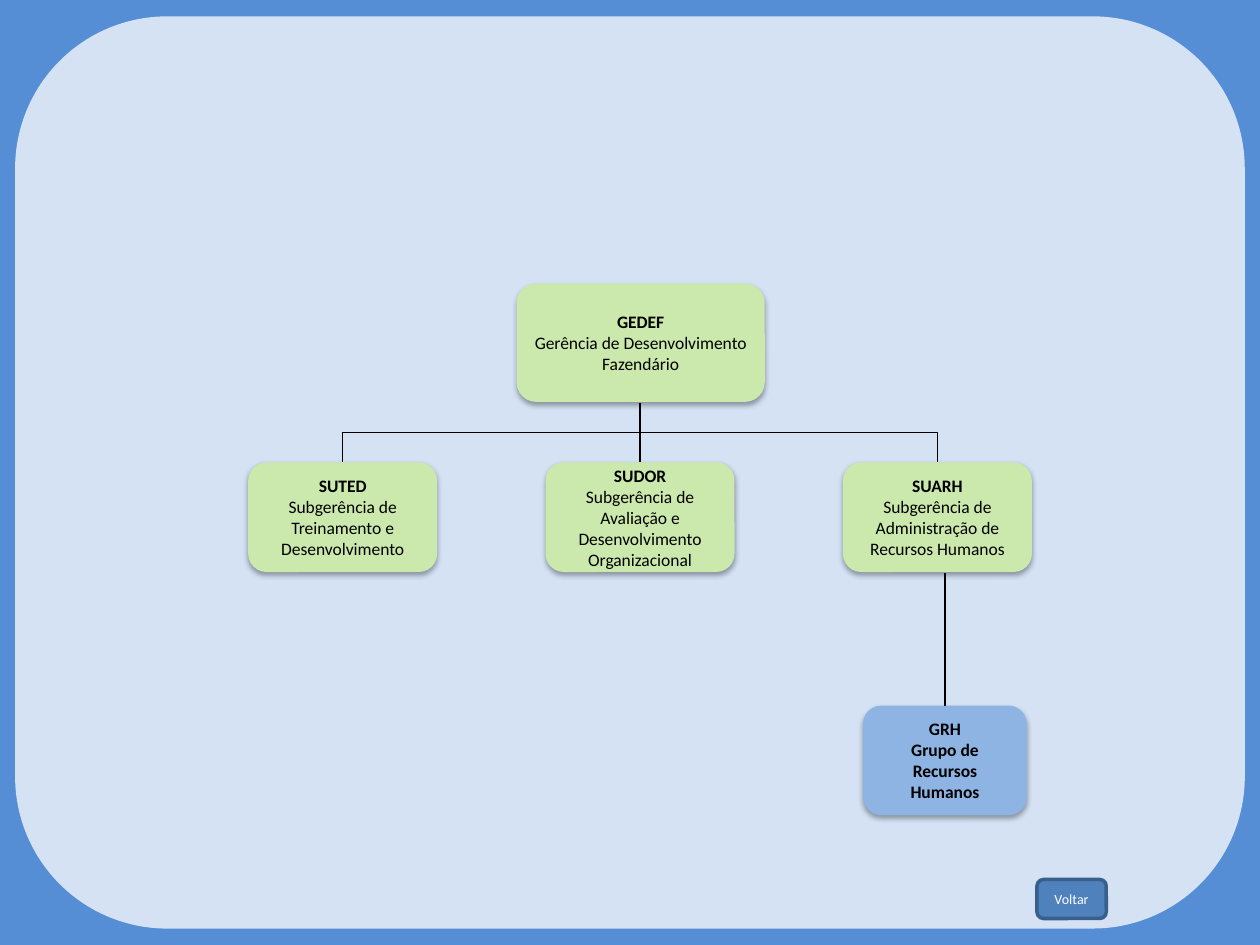
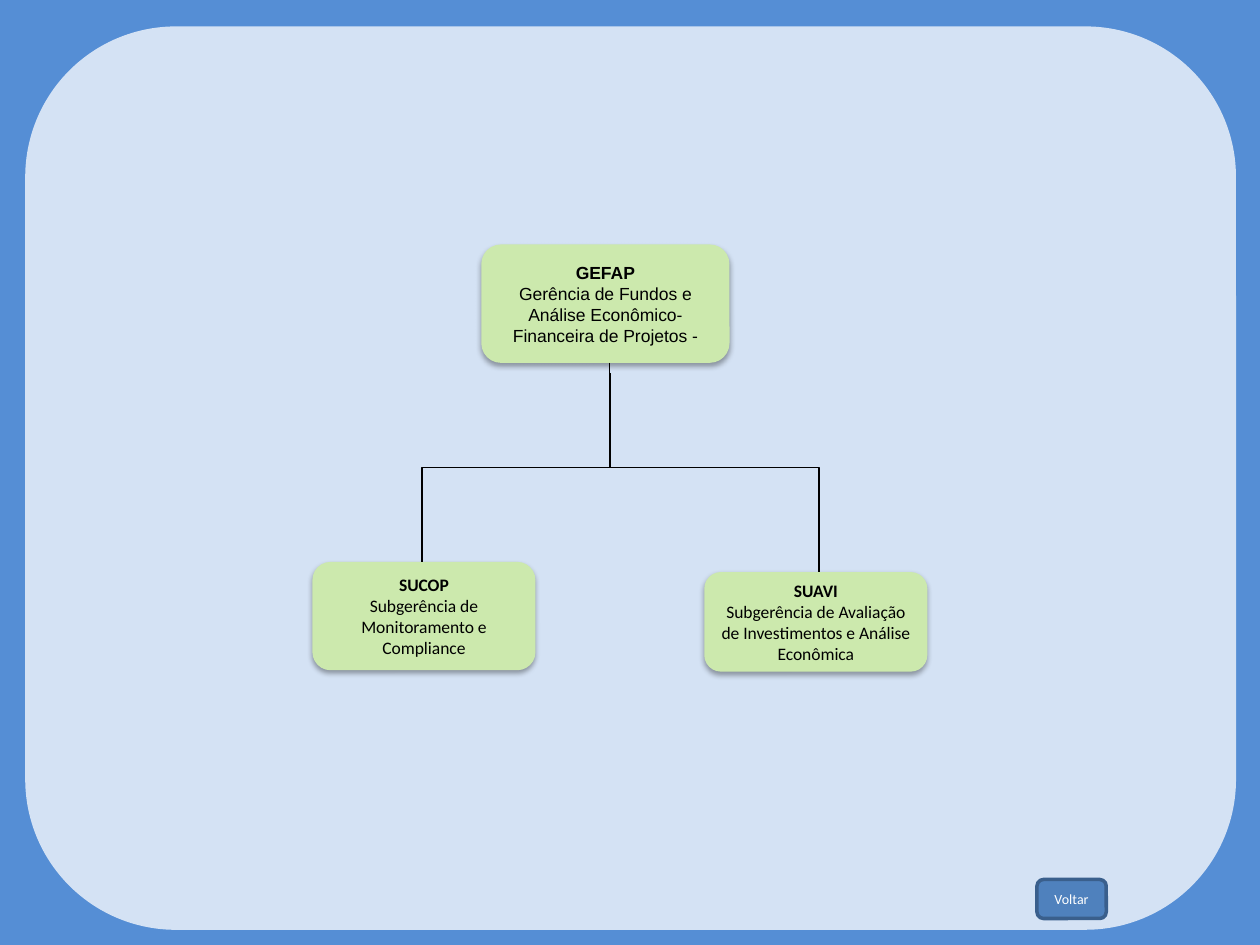
from lxml import etree
from pptx import Presentation
from pptx.dml.color import RGBColor
from pptx.enum.shapes import MSO_CONNECTOR, MSO_SHAPE
from pptx.enum.text import MSO_ANCHOR, PP_ALIGN
from pptx.oxml import parse_xml
from pptx.oxml.ns import nsdecls, qn
from pptx.util import Inches, Pt

ROUND = MSO_SHAPE.ROUNDED_RECTANGLE
ELBOW, STRAIGHT = MSO_CONNECTOR.ELBOW, MSO_CONNECTOR.STRAIGHT
CENTER, MIDDLE = PP_ALIGN.CENTER, MSO_ANCHOR.MIDDLE

COLORS = {
    "back": "558ED5",
    "panel": "D4E2F4",
    "unit": "CCE9AD",
    "group": "8EB4E3",
    "button": "4F81BD",
    "border": "3A5F8C",
    "ink": "000000",
    "white": "FFFFFF",
}
SHADOW = (
    f'<a:effectLst {nsdecls("a")}>'
    '<a:outerShdw blurRad="40000" dist="23000" dir="5400000" rotWithShape="0">'
    f'<a:srgbClr val="{COLORS["ink"]}"><a:alpha val="35000"/></a:srgbClr>'
    "</a:outerShdw></a:effectLst>"
)


def rgb(name):
    return RGBColor.from_string(COLORS[name])


class Chart:
    """Organisation chart slides: shared style and the current slide."""

    def __init__(self):
        self.prs = Presentation()
        self.prs.slide_width, self.prs.slide_height = Inches(10), Inches(7.5)
        fill = self.prs.slide_master.background.fill
        fill.solid()
        fill.fore_color.rgb = rgb("back")
        self.slide = None

    def start(self, *panel):
        """Add a slide with its pale panel and back button."""
        self.slide = self.prs.slides.add_slide(self.prs.slide_layouts[6])
        self.block(panel, "panel")
        button = self.block((8.23, 6.98, 0.55, 0.31), "button")
        button.line.color.rgb = rgb("border")
        button.line.width = Pt(2)
        self.label(button, ["Voltar"], 8, "white")

    def block(self, area, color):
        shape = self.slide.shapes.add_shape(ROUND, *map(Inches, area))
        shape.shadow.inherit = False
        shape.fill.solid()
        shape.fill.fore_color.rgb = rgb(color)
        shape.line.fill.background()
        return shape

    def label(self, shape, lines, size=10, color="ink", face="Calibri"):
        frame = shape.text_frame
        frame.word_wrap = True
        frame.vertical_anchor = MIDDLE
        frame.text = "\n".join(lines)
        for para in frame.paragraphs:
            para.alignment = CENTER
            para.font.name = face
            para.font.size = Pt(size)
            para.font.color.rgb = rgb(color)

    def unit(self, area, code, name, color="unit", face="Calibri",
             strong=False, inset=0.1):
        """Add a shadowed box with a bold code above the unit's name."""
        shape = self.block(area, color)
        props = shape._element.spPr
        props.replace(props.find(qn("a:effectLst")), parse_xml(SHADOW))
        self.label(shape, [code, name], face=face)
        frame = shape.text_frame
        frame.margin_left = frame.margin_right = Inches(inset)
        head, body = frame.paragraphs
        head.font.bold = True
        body.font.bold = strong

    def link(self, x1, y1, x2, y2):
        """Join two points with a line that leaves and arrives vertically."""
        if x1 == x2:
            kind, turn, ends = STRAIGHT, 0, (x1, y1, x2, y2)
        else:
            # An elbow runs sideways, so lay it flat and then turn it
            turn = 1 if x2 < x1 else -1
            mid_x, mid_y = (x1 + x2) / 2, (y1 + y2) / 2
            half_w, half_h = turn * (y2 - y1) / 2, turn * (x2 - x1) / 2
            kind = ELBOW
            ends = (mid_x - half_w, mid_y - half_h * -1,
                    mid_x + half_w, mid_y - half_h)
        line = self.slide.shapes.add_connector(kind, *map(Inches, ends))
        line.line.color.rgb = rgb("ink")
        line.line.width = Pt(0.75)
        props = line._element.spPr
        etree.SubElement(props, qn("a:effectLst"))
        if turn:
            props.find(qn("a:xfrm")).set("rot", str(turn * 90 % 360 * 60000))


def staff(chart):
    chart.start(0.12, 0.13, 9.76, 7.24)
    chart.unit((4.1, 2.25, 1.97, 0.94), "GEDEF",
               "Gerência de Desenvolvimento Fazendário")
    units = [
        ("SUTED", "Subgerência de Treinamento e Desenvolvimento"),
        ("SUDOR", "Subgerência de Avaliação e Desenvolvimento Organizacional"),
        ("SUARH", "Subgerência de Administração de Recursos Humanos"),
    ]
    top, width, mid, step = 3.67, 1.5, 5.08, 2.36
    for i, (code, name) in enumerate(units):
        x = mid + (i - 1) * step
        chart.unit((x - width / 2, top, width, 0.87), code, name)
        chart.link(mid, 3.2, x, top)
    chart.unit((6.85, 5.6, 1.3, 0.87), "GRH", "Grupo de Recursos Humanos",
               "group", strong=True)
    chart.link(7.5, 4.55, 7.5, 5.6)


def funds(chart):
    chart.start(0.2, 0.21, 9.61, 7.17)
    chart.unit((3.82, 1.94, 1.97, 0.94), "GEFAP",
               "Gerência de Fundos e Análise Econômico-Financeira de Projetos -",
               face="Arial")
    units = [
        (2.48, 4.46, 0.86, 3.35, 2.96, "SUCOP",
         "Subgerência de Monitoramento e Compliance"),
        (5.59, 4.54, 0.79, 6.5, 2.88, "SUAVI",
         "Subgerência de Avaliação de Investimentos e Análise Econômica"),
    ]
    for left, top, height, x, y, code, name in units:
        chart.unit((left, top, 1.77, height), code, name, inset=0.07)
        chart.link(4.84, y, x, top)


def main():
    chart = Chart()
    staff(chart)
    funds(chart)
    chart.prs.save("out.pptx")


if __name__ == "__main__":
    main()
